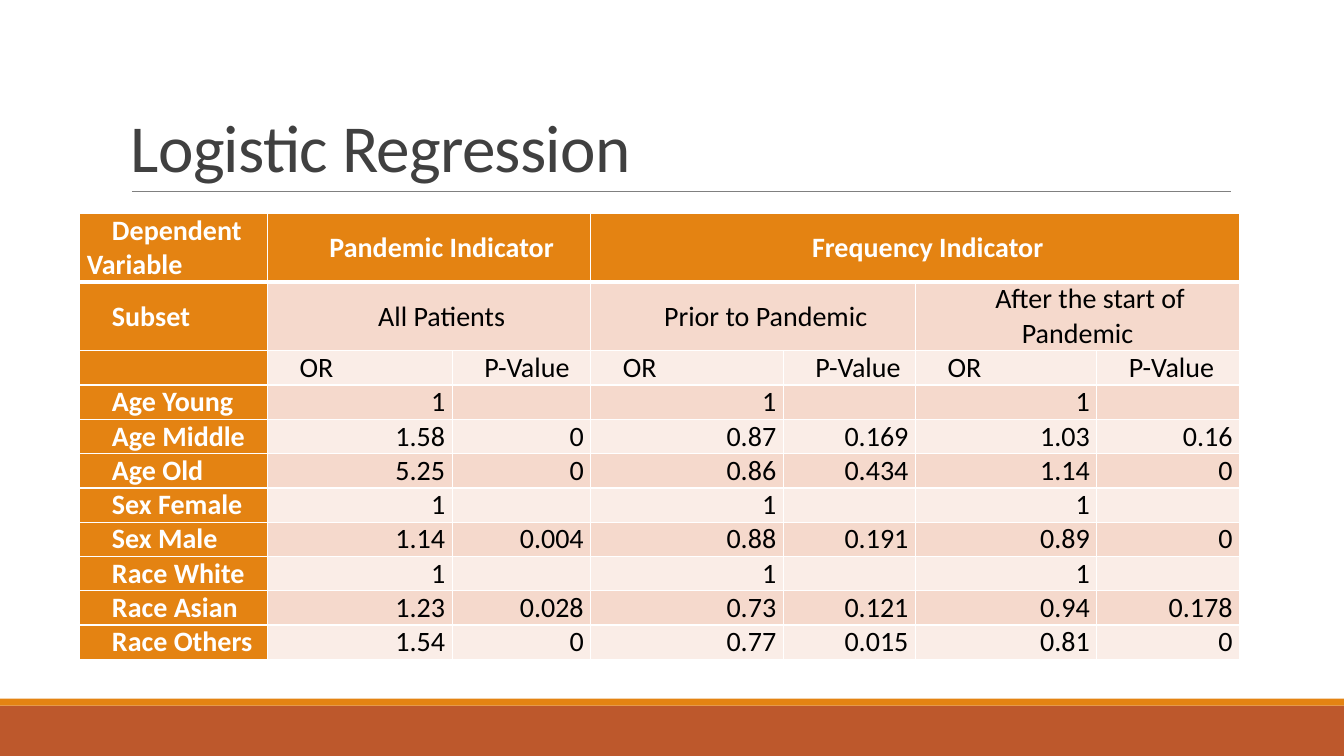
from dataclasses import dataclass
from typing import NamedTuple

from lxml import etree
from pptx import Presentation
from pptx import util as u
from pptx.dml.color import RGBColor
from pptx.enum import shapes, text
from pptx.oxml import ns


@dataclass(frozen=True)
class Theme:
    font: str = "Calibri"
    title_size: float = 48
    table_size: float = 20
    title: str = "404040"
    rule: str = "808080"
    orange: str = "E48312"
    rust: str = "BD582C"
    white: str = "FFFFFF"
    black: str = "000000"
    dark_band: str = "F5D9CC"
    light_band: str = "FAEDE7"


class Band(NamedTuple):
    top: float
    height: float
    color: str


class Span(NamedTuple):
    row: int
    first: int
    last: int


THEME = Theme()
WIDTH, HEIGHT = 960, 540
BANDS = [Band(504, 36, THEME.rust), Band(499, 5, THEME.orange)]
COLUMN_WIDTHS = [134, 132, 99, 137.5, 94.5, 129.5, 102]
LINE_HEIGHT = 24.5
HEADING_ROWS = 3
SPANS = [Span(0, 1, 2), Span(0, 3, 6), Span(1, 1, 2), Span(1, 3, 4), Span(1, 5, 6)]
ROWS = [
    ["Dependent Variable", "Pandemic Indicator", "", "Frequency Indicator", "", "", ""],
    ["Subset", "All Patients", "", "Prior to Pandemic", "", "After the start of Pandemic", ""],
    ["", *["OR", "P-Value"] * 3],
    ["Age Young", *["1", ""] * 3],
    ["Age Middle", "1.58", "0", "0.87", "0.169", "1.03", "0.16"],
    ["Age Old", "5.25", "0", "0.86", "0.434", "1.14", "0"],
    ["Sex Female", *["1", ""] * 3],
    ["Sex Male", "1.14", "0.004", "0.88", "0.191", "0.89", "0"],
    ["Race White", *["1", ""] * 3],
    ["Race Asian", "1.23", "0.028", "0.73", "0.121", "0.94", "0.178"],
    ["Race Others", "1.54", "0", "0.77", "0.015", "0.81", "0"],
]


def rgb(color: str) -> RGBColor:
    return RGBColor.from_string(color)


def set_font(paragraph, size: float, color: str, bold: bool = False) -> None:
    font = paragraph.font
    font.name, font.size, font.bold = THEME.font, u.Pt(size), bold
    font.color.rgb = rgb(color)


def add_band(slide, band: Band) -> None:
    shape = slide.shapes.add_shape(
        shapes.MSO_SHAPE.RECTANGLE, 0, u.Pt(band.top), u.Pt(WIDTH), u.Pt(band.height))
    shape.shadow.inherit = False
    shape.fill.solid()
    shape.fill.fore_color.rgb = rgb(band.color)
    shape.line.fill.background()


def add_title_rule(slide) -> None:
    rule = slide.shapes.add_connector(
        shapes.MSO_CONNECTOR.STRAIGHT, u.Pt(94.3), u.Pt(136.8), u.Pt(879), u.Pt(136.8))
    rule.line.color.rgb = rgb(THEME.rule)
    rule.line.width = u.Pt(0.5)
    etree.SubElement(rule.element.spPr, ns.qn("a:effectLst"))


def add_title(slide, title: str) -> None:
    box = slide.shapes.add_textbox(u.Pt(86.4), u.Pt(22.6), u.Pt(792), u.Pt(114.2))
    frame = box.text_frame
    frame.word_wrap = True
    frame.vertical_anchor = text.MSO_ANCHOR.BOTTOM
    paragraph = frame.paragraphs[0]
    run = paragraph.add_run()
    run.text = title
    paragraph.line_spacing = 0.85
    set_font(paragraph, THEME.title_size, THEME.title)
    run.font.size = u.Pt(THEME.title_size)
    run.font._element.set("spc", "-50")


def set_borders(cell, row: int) -> None:
    """Draw white cell edges, heavier between the header and the body."""
    properties = cell._tc.get_or_add_tcPr()
    heavy_side = {0: "lnB", 1: "lnT"}.get(row)
    for side in ("lnL", "lnR", "lnT", "lnB"):
        width = 3 if side == heavy_side else 1
        line = etree.SubElement(properties, ns.qn(f"a:{side}"), w=str(u.Pt(width)))
        fill = etree.SubElement(line, ns.qn("a:solidFill"))
        etree.SubElement(fill, ns.qn("a:srgbClr"), val=THEME.white)


def cell_alignment(row: int, column: int) -> text.PP_ALIGN:
    if column == 0 or row == HEADING_ROWS - 1:
        return text.PP_ALIGN.JUSTIFY
    return text.PP_ALIGN.CENTER if row < HEADING_ROWS else text.PP_ALIGN.RIGHT


def style_cell(cell, row: int, column: int, content: str) -> None:
    is_header = row == 0 or column == 0
    band = THEME.dark_band if row % 2 else THEME.light_band
    set_borders(cell, row)
    cell.fill.solid()
    cell.fill.fore_color.rgb = rgb(THEME.orange if is_header else band)
    cell.margin_left = cell.margin_right = u.Pt(5)
    cell.margin_top = cell.margin_bottom = 0
    cell.vertical_anchor = text.MSO_ANCHOR.MIDDLE
    paragraph = cell.text_frame.paragraphs[0]
    if content:
        paragraph.add_run().text = content
    paragraph.alignment = cell_alignment(row, column)
    set_font(paragraph, THEME.table_size, THEME.white if is_header else THEME.black, is_header)
    paragraph._p.get_or_add_pPr().set("indent", str(u.Pt(18)))


def add_results_table(slide) -> None:
    heights = [LINE_HEIGHT * (2 if row < 2 else 1) for row in range(len(ROWS))]
    frame = slide.shapes.add_table(
        len(ROWS), len(COLUMN_WIDTHS), u.Pt(57), u.Pt(152.6),
        u.Pt(sum(COLUMN_WIDTHS)), u.Pt(sum(heights)))
    table = frame.table
    for column, width in zip(table.columns, COLUMN_WIDTHS):
        column.width = u.Pt(width)
    for row, height in zip(table.rows, heights):
        row.height = u.Pt(height)
    for row, contents in enumerate(ROWS):
        for column, content in enumerate(contents):
            style_cell(table.cell(row, column), row, column, content)
    for span in SPANS:
        table.cell(span.row, span.first).merge(table.cell(span.row, span.last))


def main() -> None:
    presentation = Presentation()
    presentation.slide_width, presentation.slide_height = u.Pt(WIDTH), u.Pt(HEIGHT)
    slide = presentation.slides.add_slide(presentation.slide_layouts[6])
    for band in BANDS:
        add_band(slide, band)
    add_title_rule(slide)
    add_title(slide, "Logistic Regression")
    add_results_table(slide)
    presentation.save("out.pptx")


if __name__ == "__main__":
    main()
